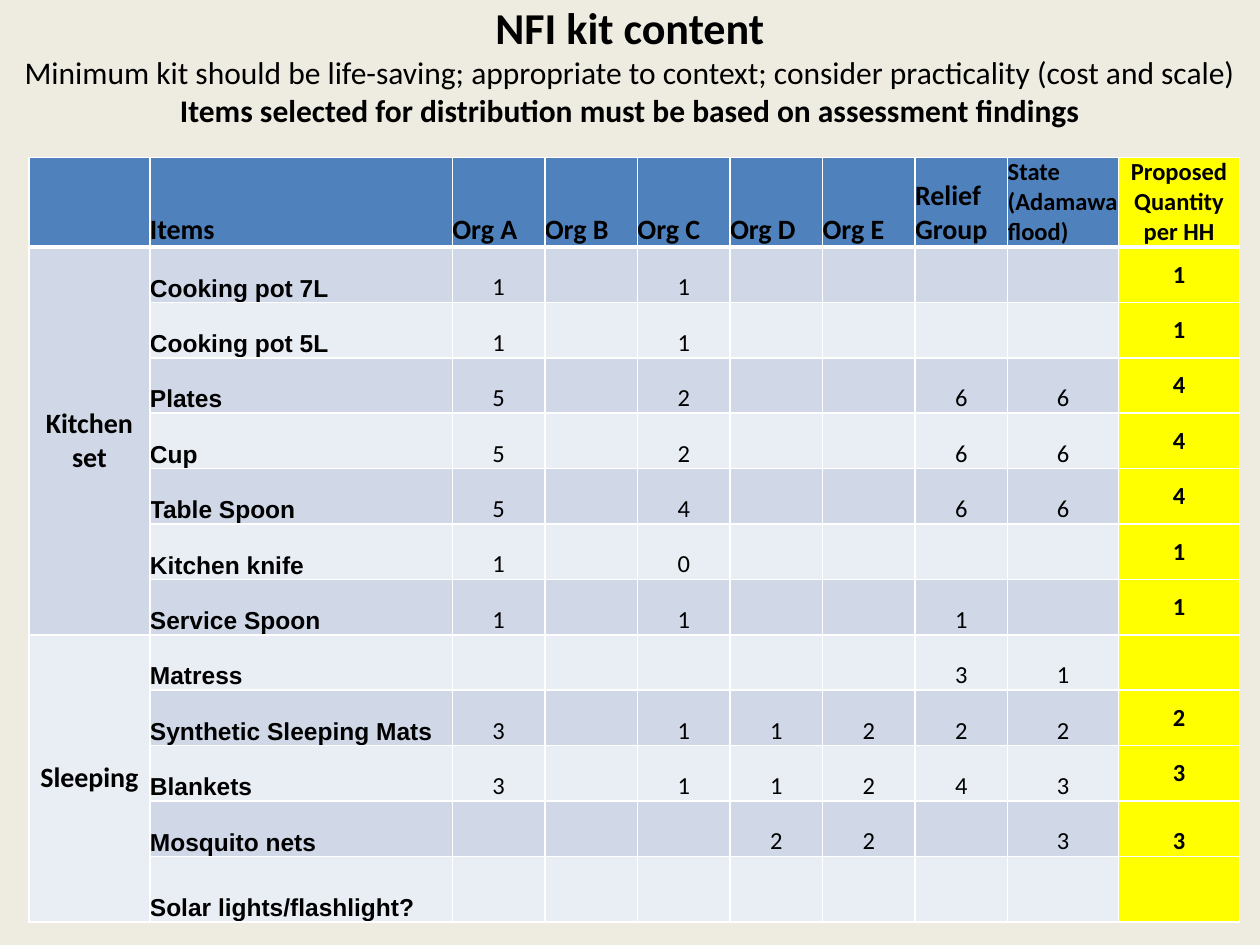
from lxml import etree
from pptx import Presentation
from pptx import util as u
from pptx.dml.color import RGBColor
from pptx.enum import text
from pptx.oxml.ns import qn

THEME = {
    "background": "EEECE1", "header": "4F81BD", "proposed": "FFFF00",
    "bands": ("D0D8E8", "E9EDF4"), "ink": "000000", "border": "FFFFFF",
    "font": "Calibri", "item_font": "Arial",
    "title": 25.2, "subtitle": 18, "heading": 16, "body": 14,
}
TITLE = [
    ("NFI kit content", THEME["title"], True),
    ("Minimum kit should be life-saving; appropriate to context; "
     "consider practicality (cost and scale)", THEME["subtitle"], False),
    ("Items selected for distribution must be based on assessment findings",
     THEME["subtitle"], True),
]
HEADER = ["", "Items", "Org A", "Org B", "Org C", "Org D", "Org E", "Relief\nGroup",
          "State (Adamawa flood)", "Proposed Quantity per HH"]
GROUPS = {
    "Kitchen set": [
        ("Cooking pot 7L", 1, "", 1, "", "", "", "", 1),
        ("Cooking pot 5L", 1, "", 1, "", "", "", "", 1),
        ("Plates", 5, "", 2, "", "", 6, 6, 4),
        ("Cup", 5, "", 2, "", "", 6, 6, 4),
        ("Table Spoon", 5, "", 4, "", "", 6, 6, 4),
        ("Kitchen knife", 1, "", 0, "", "", "", "", 1),
        ("Service Spoon", 1, "", 1, "", "", 1, "", 1),
    ],
    "Sleeping": [
        ("Matress", "", "", "", "", "", 3, 1, ""),
        ("Synthetic Sleeping Mats", 3, "", 1, 1, 2, 2, 2, 2),
        ("Blankets", 3, "", 1, 1, 2, 4, 3, 3),
        ("Mosquito nets", "", "", "", 2, 2, "", 3, 3),
        ("Solar lights/flashlight?", "", "", "", "", "", "", "", ""),
    ],
}
TABLE_WIDTH = 9.61
OUTER_LEFT, OUTER_RIGHT = [0.96, 2.4], [0.88, 0.96]
AGENCY_WIDTH = (TABLE_WIDTH - sum(OUTER_LEFT + OUTER_RIGHT)) / 6
COLUMNS = OUTER_LEFT + [AGENCY_WIDTH] * 6 + OUTER_RIGHT
ROWS = [0.71] + [0.44] * 11 + [0.52]
GROUP, ITEM, STATE, PROPOSED = 0, 1, 8, 9
LEFT, CENTER = text.PP_ALIGN.LEFT, text.PP_ALIGN.CENTER
MIDDLE, BOTTOM = text.MSO_ANCHOR.MIDDLE, text.MSO_ANCHOR.BOTTOM


def style_run(r, size, bold, font=THEME["font"]):
    r.font.name, r.font.size, r.font.bold = font, u.Pt(size), bold
    r.font.color.rgb = RGBColor.from_string(THEME["ink"])


def set_borders(cell, row):
    weights = {"a:lnL": 1, "a:lnR": 1, "a:lnT": 3 if row == 1 else 1,
               "a:lnB": 3 if row == 0 else 1}
    props = cell._tc.get_or_add_tcPr()
    for i, (tag, points) in enumerate(weights.items()):
        line = etree.Element(qn(tag), w=str(u.Pt(points)))
        fill = etree.SubElement(line, qn("a:solidFill"))
        etree.SubElement(fill, qn("a:srgbClr"), val=THEME["border"])
        props.insert(i, line)


def cell_style(row, col):
    size, bold, font, align, anchor = THEME["body"], True, THEME["font"], CENTER, BOTTOM
    color = THEME["bands"][(row - 1) % 2]
    if row == 0:
        color = THEME["header"]
        align = LEFT
        size = THEME["body"] if col >= STATE else THEME["heading"]
    elif col == GROUP:
        size, anchor = THEME["heading"], MIDDLE
    elif col == ITEM:
        font, align = THEME["item_font"], LEFT
    elif col != PROPOSED:
        bold = False
    if col == PROPOSED:
        color, align = THEME["proposed"], CENTER
        anchor = BOTTOM if row == len(ROWS) - 2 else MIDDLE
    return color, align, anchor, (size, bold, font)


def fill_cell(cell, value, row, col):
    color, align, anchor, run_style = cell_style(row, col)
    cell.margin_left = cell.margin_right = cell.margin_top = cell.margin_bottom = 0
    cell.vertical_anchor = anchor
    cell.fill.solid()
    cell.fill.fore_color.rgb = RGBColor.from_string(color)
    set_borders(cell, row)
    cell.text_frame.text = str(value)
    for p in cell.text_frame.paragraphs:
        p.alignment = align
        for r in p.runs:
            style_run(r, *run_style)


def add_title(slide):
    sp = slide.shapes.add_textbox(0, 0, u.Inches(10), u.Inches(1.33))
    tf = sp.text_frame
    tf.word_wrap = True
    tf.margin_top = 0
    p = tf.paragraphs[0]
    p.text = "\v".join(line for line, _, _ in TITLE)
    p.alignment = CENTER
    for r, (_, size, bold) in zip(p.runs, TITLE):
        style_run(r, size, bold)


def add_kit_table(slide):
    frame = slide.shapes.add_table(len(ROWS), len(COLUMNS), u.Inches(0.23), u.Inches(1.25),
                                   u.Inches(TABLE_WIDTH), u.Inches(sum(ROWS)))
    table = frame.table
    table.horz_banding = False
    for column, width in zip(table.columns, COLUMNS):
        column.width = u.Inches(width)
    for row, height in zip(table.rows, ROWS):
        row.height = u.Inches(height)
    records, spans = [HEADER], []
    for name, items in GROUPS.items():
        spans.append((len(records), len(records) + len(items) - 1))
        records += [(name if i == 0 else "", *item) for i, item in enumerate(items)]
    for row, record in enumerate(records):
        for col, value in enumerate(record):
            fill_cell(table.cell(row, col), value, row, col)
    for first, last in spans:
        table.cell(first, GROUP).merge(table.cell(last, GROUP))


def main():
    """Build the NFI kit content slide."""
    prs = Presentation()
    prs.slide_width, prs.slide_height = u.Inches(10), u.Inches(7.5)
    slide = prs.slides.add_slide(prs.slide_layouts[6])
    slide.background.fill.solid()
    slide.background.fill.fore_color.rgb = RGBColor.from_string(THEME["background"])
    add_title(slide)
    add_kit_table(slide)
    prs.save("out.pptx")


if __name__ == "__main__":
    main()
